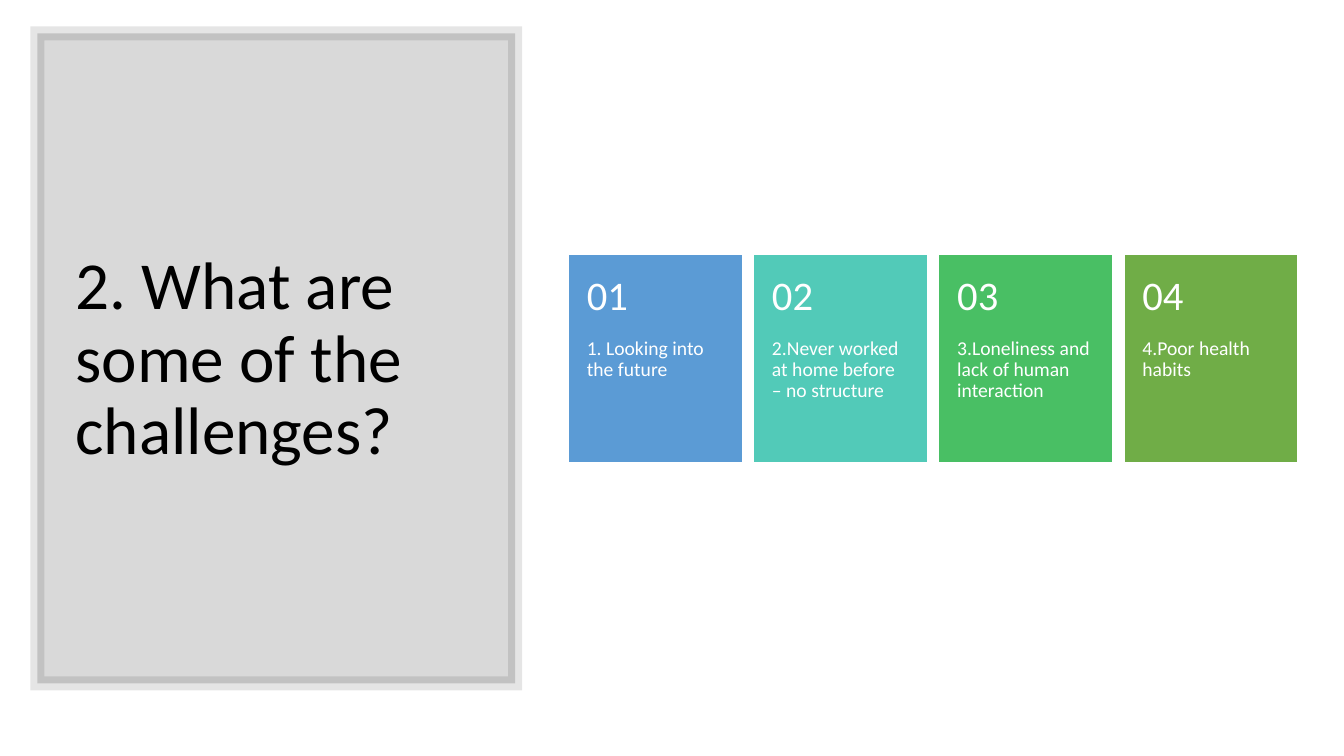
from lxml.etree import SubElement
from pptx import Presentation
from pptx.dml.color import RGBColor
from pptx.enum.shapes import MSO_SHAPE
from pptx.enum.text import MSO_ANCHOR, MSO_AUTO_SIZE, PP_ALIGN
from pptx.oxml.ns import qn
from pptx.util import Inches, Pt

# Content
TITLE = "2. What are some of the challenges?"
CARDS = [
    ("01", "1. Looking into the future", "5B9BD5"),
    ("02", "2.Never worked at home before – no structure", "52CAB8"),
    ("03", "3.Loneliness and lack of human interaction", "49BF64"),
    ("04", "4.Poor health habits", "70AD47"),
]

# Card grid, in inches
LEFT, TOP, WIDE, HIGH = 5.65, 2.54, 1.7, 2.04
STEP = 1.837
HEAD = HIGH * 0.4
PAD = 0.17


def color(fmt, code, alpha=None):
    fmt.solid()
    fmt.fore_color.rgb = RGBColor.from_string(code)
    if alpha:
        tone = fmt._xPr.find(qn("a:solidFill"))[0]
        SubElement(tone, qn("a:alpha"), val=str(alpha * 1000))


def add_box(x, y, w, h, code, width, alpha=(None, None)):
    box = slide.shapes.add_shape(
        MSO_SHAPE.RECTANGLE, Inches(x), Inches(y), Inches(w), Inches(h))
    box.shadow.inherit = False
    color(box.fill, code, alpha[0])
    box.line.width = Pt(width)
    color(box.line.fill, code, alpha[1])
    SubElement(box.line._ln, qn("a:miter"), lim="800000")


def set_text(shape, text, size, code, anchor, pads):
    frame = shape.text_frame
    frame.text = text
    frame.word_wrap = True
    frame.auto_size = MSO_AUTO_SIZE.NONE
    frame.vertical_anchor = anchor
    (frame.margin_left, frame.margin_top,
     frame.margin_right, frame.margin_bottom) = map(Inches, pads)
    para = frame.paragraphs[0]
    para.alignment = PP_ALIGN.LEFT
    para.line_spacing = 0.9
    para.font.name = "Calibri"
    para.font.size = Pt(size)
    para.font.color.rgb = RGBColor.from_string(code)


def add_text(x, y, h, *style):
    box = slide.shapes.add_textbox(
        Inches(x), Inches(y), Inches(WIDE), Inches(h))
    set_text(box, *style)


deck = Presentation()
deck.slide_width, deck.slide_height = Inches(13.33), Inches(7.5)
slide = deck.slides.add_slide(deck.slide_layouts[5])

# Title panel, with the title brought in front of it
add_box(0.37, 0.33, 4.74, 6.45, "000000", 10, (15, 10))
title = slide.shapes.title
slide.shapes._spTree.append(title._element)
title.left, title.top = Inches(0.65), Inches(0.7)
title.width, title.height = Inches(4.16), Inches(5.75)
set_text(title, TITLE, 48, "000000", MSO_ANCHOR.MIDDLE, (0.1, 0.05, 0.1, 0.05))

# Numbered cards
for i, (num, text, code) in enumerate(CARDS):
    x = LEFT + i * STEP
    add_box(x, TOP, WIDE, HIGH, code, 1)
    add_text(x, TOP + HEAD, HIGH - HEAD, text, 14, "FFFFFF",
             MSO_ANCHOR.TOP, (PAD, 0, PAD, 0.36))
    add_text(x, TOP, HEAD, num, 29, "FFFFFF",
             MSO_ANCHOR.MIDDLE, (PAD, 0.18, PAD, 0.18))

deck.save("out.pptx")
